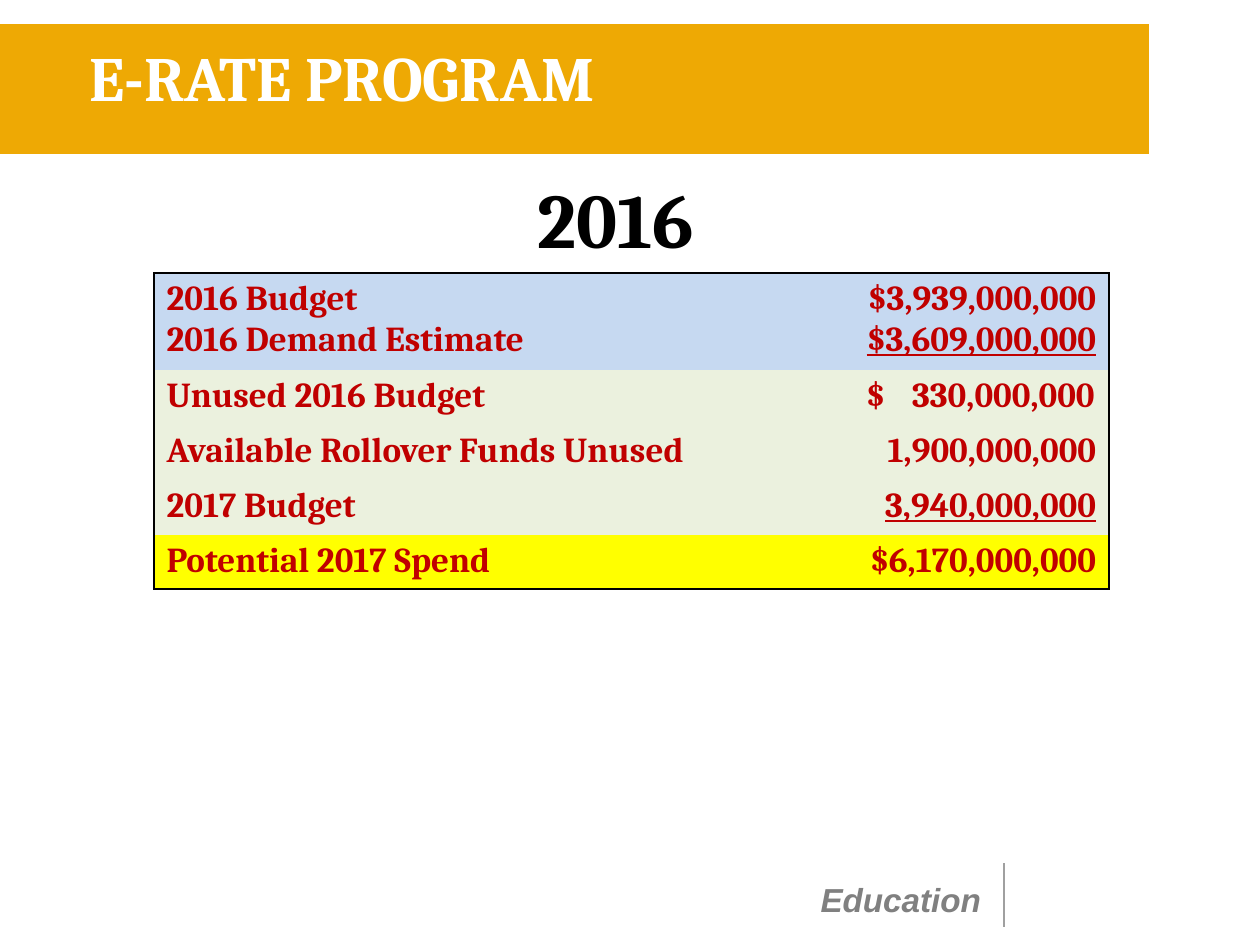
from lxml import etree
from pptx import Presentation
from pptx import util as u
from pptx.dml.color import RGBColor
from pptx.enum import shapes, text
from pptx.oxml.ns import qn

SCALE = 914400 // 126
COLORS = {
    "gold": "EEA904", "white": "FFFFFF", "gray": "808080", "rule": "A0A0A0",
    "black": "000000", "red": "C00000", "blue": "C6D9F1", "green": "EBF1DE",
    "yellow": "FFFF00",
}
TITLE = {"name": "Cambria", "size": u.Pt(36), "bold": True, "color": "white"}
YEAR = {"name": "Cambria", "size": u.Pt(44), "bold": True, "color": "black"}
FOOTER = {"name": "Arial", "size": u.Pt(19), "bold": True, "italic": True, "color": "gray"}
CELL = {"name": "Cambria", "size": u.Pt(20), "bold": True, "color": "red"}
TOTAL = {**CELL, "underline": True}
LEFT, RIGHT = text.PP_ALIGN.LEFT, text.PP_ALIGN.RIGHT
DOLLAR_INDENT, AMOUNT_TAB = 52, 229

ROWS = [
    ("blue", 94, ["2016 Budget", "2016 Demand Estimate"],
     [("$3,939,000,000", CELL), ("$3,609,000,000", TOTAL)]),
    ("green", 55, ["Unused 2016 Budget"], [("$\t330,000,000", CELL)]),
    ("green", 55, ["Available Rollover Funds Unused"], [("1,900,000,000", CELL)]),
    ("green", 55, ["2017 Budget"], [("3,940,000,000", TOTAL)]),
    ("yellow", 54, ["Potential 2017 Spend"], [("$6,170,000,000", CELL)]),
]


def px(*lengths):
    return [u.Emu(length * SCALE) for length in lengths]


def rgb(color):
    return RGBColor.from_string(COLORS[color])


class SlideBuilder:
    def __init__(self, slide):
        self.slide = slide

    def add_words(self, paragraph, words, style, align=LEFT):
        paragraph.alignment = align
        run = paragraph.add_run()
        run.text = words
        for name, value in style.items():
            if name == "color":
                run.font.color.rgb = rgb(value)
            else:
                setattr(run.font, name, value)

    def band(self, box, color):
        shape = self.slide.shapes.add_shape(shapes.MSO_SHAPE.RECTANGLE, *px(*box))
        shape.shadow.inherit = False
        shape.fill.solid()
        shape.fill.fore_color.rgb = rgb(color)
        shape.line.fill.background()

    def rule(self, ends, color, width):
        line = self.slide.shapes.add_connector(shapes.MSO_CONNECTOR.STRAIGHT, *px(*ends))
        line.line.color.rgb = rgb(color)
        line.line.width = u.Pt(width)
        etree.SubElement(line._element.spPr, qn("a:effectLst"))

    def label(self, box, words, style, align=LEFT, spacing=None, **frame_format):
        frame = self.slide.shapes.add_textbox(*px(*box)).text_frame
        for name, value in {"word_wrap": True, **frame_format}.items():
            setattr(frame, name, value)
        paragraph = frame.paragraphs[0]
        paragraph.line_spacing = spacing
        self.add_words(paragraph, words, style, align)

    def fill_cell(self, cell, color, lines, align):
        cell.fill.solid()
        cell.fill.fore_color.rgb = rgb(color)
        frame = cell.text_frame
        for index, (words, style) in enumerate(lines):
            paragraph = frame.add_paragraph() if index else frame.paragraphs[0]
            if "\t" in words:
                cell.margin_left, tab = px(DOLLAR_INDENT, AMOUNT_TAB)
                tabs = etree.SubElement(paragraph._p.get_or_add_pPr(), qn("a:tabLst"))
                etree.SubElement(tabs, qn("a:tab"), pos=str(int(tab)), algn="r")
                self.add_words(paragraph, words, style)
            else:
                self.add_words(paragraph, words, style, align)

    def border_cell(self, cell, visible):
        properties = cell._tc.get_or_add_tcPr()
        for index, side in enumerate("LRTB"):
            line = etree.Element(qn("a:ln" + side), w=str(int(u.Pt(1))))
            if side in visible:
                fill = etree.SubElement(line, qn("a:solidFill"))
                etree.SubElement(fill, qn("a:srgbClr"), val=COLORS["black"])
            else:
                etree.SubElement(line, qn("a:noFill"))
            properties.insert(index, line)

    def budget_table(self, left, top, widths, rows):
        heights = [row[1] for row in rows]
        box = px(left, top, sum(widths), sum(heights))
        table = self.slide.shapes.add_table(len(rows), len(widths), *box).table
        table.first_row = table.horz_banding = False
        for column, width in zip(table.columns, px(*widths)):
            column.width = width
        for index, (color, height, names, amounts) in enumerate(rows):
            table.rows[index].height = px(height)[0]
            edges = ("T" if index == 0 else "") + ("B" if index == len(rows) - 1 else "")
            name_cell, amount_cell = table.cell(index, 0), table.cell(index, 1)
            self.fill_cell(name_cell, color, [(name, CELL) for name in names], LEFT)
            self.fill_cell(amount_cell, color, amounts, RIGHT)
            self.border_cell(name_cell, edges + "L")
            self.border_cell(amount_cell, edges + "R")


def main():
    presentation = Presentation()
    presentation.slide_width, presentation.slide_height = u.Inches(10), u.Inches(7.5)
    builder = SlideBuilder(presentation.slides.add_slide(presentation.slide_layouts[6]))
    builder.band((0, 24, 1149, 130), "gold")
    builder.rule((1004, 927, 1004, 863), "rule", 1.5)
    builder.label((766, 873, 215, 53), "Education", FOOTER, RIGHT,
                  margin_left=0, margin_right=0)
    builder.label((77, 25, 1134, 130), "E-RATE PROGRAM", TITLE, spacing=u.Pt(28),
                  vertical_anchor=text.MSO_ANCHOR.MIDDLE)
    builder.budget_table(154, 273, (660, 295), ROWS)
    builder.label((525, 165, 209, 106), "2016", YEAR)
    presentation.save("out.pptx")


if __name__ == "__main__":
    main()
